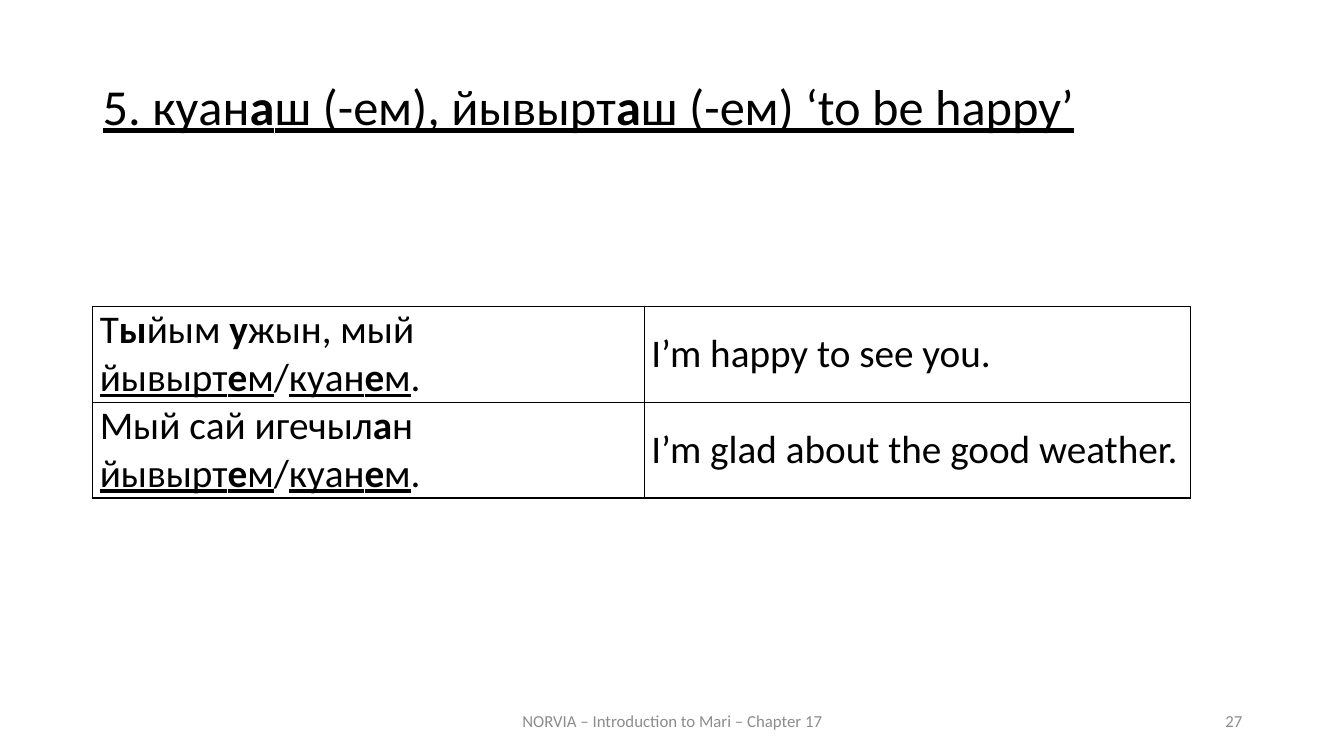
from dataclasses import dataclass

from lxml import etree
from pptx import Presentation
from pptx import util as u
from pptx.dml.color import RGBColor
from pptx.enum import text
from pptx.oxml import ns


@dataclass(frozen=True)
class Theme:
    font: str = "Calibri"
    ink: str = "000000"
    muted: str = "8C8C8C"
    title: int = 36
    body: int = 28
    footer: int = 12


theme = Theme()


def write(p, marked, size, color):
    """Fill a paragraph; * toggles bold and _ toggles underline."""
    p.font.name = theme.font
    p.font.size = u.Pt(size)
    p.font.color.rgb = RGBColor.from_string(color)
    underlined = False
    for i, part in enumerate(marked.split("_")):
        underlined = i % 2 == 1
        for j, piece in enumerate(part.split("*")):
            if piece:
                r = p.add_run()
                r.text = piece
                if j % 2:
                    r.font.bold = True
                if underlined:
                    r.font.underline = True


def add_text(s, box, marked, size, color, align, anchor):
    sp = s.shapes.add_textbox(*map(u.Inches, box))
    tf = sp.text_frame
    tf.word_wrap = True
    tf.vertical_anchor = anchor
    p = tf.paragraphs[0]
    p.alignment = align
    write(p, marked, size, color)
    return p


prs = Presentation()
prs.slide_width, prs.slide_height = u.Inches(13.33), u.Inches(7.5)
s = prs.slides.add_slide(prs.slide_layouts[6])

# Title
p = add_text(s, (0.92, 0.76, 11.5, 0.99),
             "_5. куан*а*ш (-ем), йывырт*а*ш (-ем) ‘to be happy’_",
             theme.title, theme.ink, text.PP_ALIGN.JUSTIFY, text.MSO_ANCHOR.TOP)
p.line_spacing = 0.9
p.space_before = u.Pt(12)

# Footer and slide number
for box, label, align in (
    ((4.42, 6.95, 4.5, 0.4), "NORVIA – Introduction to Mari – Chapter 17", text.PP_ALIGN.CENTER),
    ((9.42, 6.95, 3, 0.4), "27", text.PP_ALIGN.RIGHT),
):
    add_text(s, box, label, theme.footer, theme.muted, align, text.MSO_ANCHOR.MIDDLE)

# Example sentences with translations
verbs = "_йывырт*е*м_/_куан*е*м_."
examples = (
    ("Т*ы*йым *у*жын, мый " + verbs, "I’m happy to see you."),
    ("Мый сай игечыл*а*н " + verbs, "I’m glad about the good weather."),
)
col_widths = (5.47, 5.42)
row_height = 0.95
table = s.shapes.add_table(
    len(examples), len(col_widths), u.Inches(0.92), u.Inches(3.04),
    u.Inches(sum(col_widths)), u.Inches(row_height * len(examples))).table
table.first_row = table.horz_banding = False
for column, width in zip(table.columns, col_widths):
    column.width = u.Inches(width)

for row, sentences in zip(table.rows, examples):
    row.height = u.Inches(row_height)
    for cell, sentence in zip(row.cells, sentences):
        cell.margin_left = cell.margin_right = u.Inches(0.07)
        cell.margin_top = cell.margin_bottom = 0
        cell.vertical_anchor = text.MSO_ANCHOR.MIDDLE
        write(cell.text_frame.paragraphs[0], sentence, theme.body, theme.ink)

        # Borders precede the fill in the cell properties
        tc_pr = cell._tc.get_or_add_tcPr()
        for side in ("a:lnL", "a:lnR", "a:lnT", "a:lnB"):
            ln = etree.SubElement(tc_pr, ns.qn(side), w=str(u.Pt(1)))
            solid = etree.SubElement(ln, ns.qn("a:solidFill"))
            etree.SubElement(solid, ns.qn("a:srgbClr"), val=theme.ink)
        cell.fill.background()

prs.save("out.pptx")
